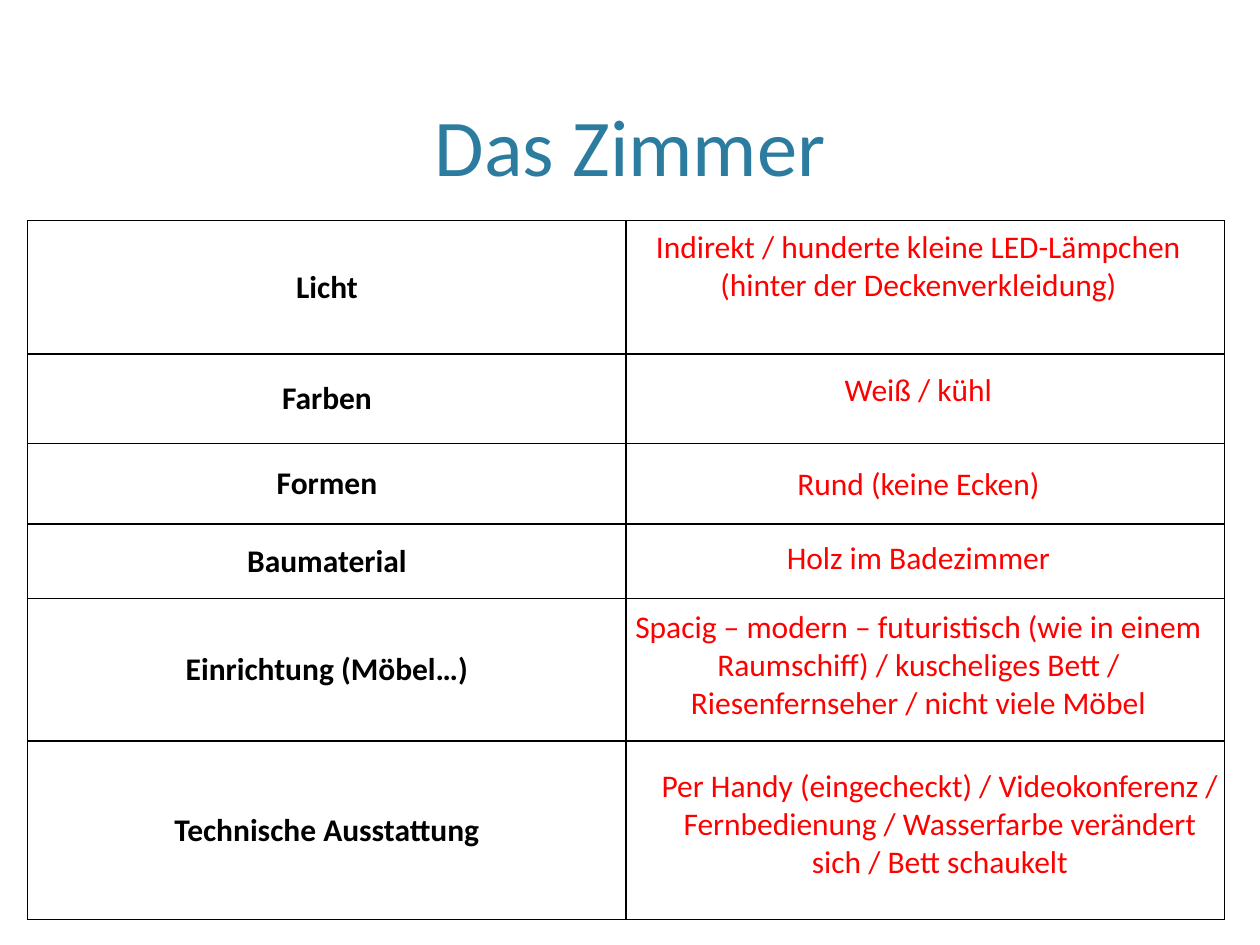
from dataclasses import dataclass

from lxml import etree
from pptx import Presentation
from pptx.dml.color import RGBColor
from pptx.enum.text import MSO_ANCHOR, MSO_AUTO_SIZE, PP_ALIGN
from pptx.oxml.ns import qn
from pptx.util import Inches, Pt

CENTER = PP_ALIGN.CENTER
MIDDLE, BOTTOM = MSO_ANCHOR.MIDDLE, MSO_ANCHOR.BOTTOM
GROW, FIXED = MSO_AUTO_SIZE.SHAPE_TO_FIT_TEXT, MSO_AUTO_SIZE.NONE


@dataclass(frozen=True)
class Theme:
    """Fonts, colours and type sizes of the slide."""
    font: str = "Calibri"
    title: str = "2C7C9F"
    label: str = "000000"
    answer: str = "FF0000"
    border: str = "000000"
    title_size: int = 46
    body_size: int = 18
    border_width: int = 1


class SlideBuilder:
    """Places styled elements on the current slide."""

    def __init__(self, slide, theme):
        self.s = slide
        self.theme = theme

    def add_text(self, tf, text, size, color, bold=False):
        """Add one centred run to the first paragraph."""
        p = tf.paragraphs[0]
        p.alignment = CENTER
        r = p.add_run()
        r.text = text
        r.font.name = self.theme.font
        r.font.size = Pt(size)
        r.font.bold = bold
        r.font.color.rgb = RGBColor.from_string(color)

    def title(self, text, box):
        """Move and fill the title placeholder."""
        sp = self.s.shapes.title
        sp.left, sp.top, sp.width, sp.height = map(Inches, box)
        tf = sp.text_frame
        tf.auto_size = FIXED
        tf.vertical_anchor = BOTTOM
        self.add_text(tf, text, self.theme.title_size, self.theme.title)

    def borders(self, cell):
        """Draw a solid line on all four sides of a cell."""
        tc_pr = cell._tc.get_or_add_tcPr()
        for i, side in enumerate(("a:lnL", "a:lnR", "a:lnT", "a:lnB")):
            ln = etree.Element(qn(side), w=str(Pt(self.theme.border_width)))
            fill = etree.SubElement(ln, qn("a:solidFill"))
            etree.SubElement(fill, qn("a:srgbClr"), val=self.theme.border)
            tc_pr.insert(i, ln)

    def label_table(self, labels, heights, left, top, col_width):
        """Add a two-column table with labels on the left."""
        table = self.s.shapes.add_table(
            len(labels), 2, Inches(left), Inches(top),
            Inches(2 * col_width), Inches(sum(heights))).table
        table.first_row = table.horz_banding = False
        for col in table.columns:
            col.width = Inches(col_width)
        for row, label, height in zip(table.rows, labels, heights):
            row.height = Inches(height)
            for cell in row.cells:
                cell.fill.background()
                cell.vertical_anchor = MIDDLE
                self.borders(cell)
            self.add_text(row.cells[0].text_frame, label,
                          self.theme.body_size, self.theme.label, bold=True)

    def answer(self, text, left, top, width, height):
        """Add a centred answer over the right column."""
        sp = self.s.shapes.add_textbox(*map(Inches, (left, top, width, height)))
        tf = sp.text_frame
        tf.word_wrap = True
        tf.auto_size = GROW
        self.add_text(tf, text, self.theme.body_size, self.theme.answer)


ROWS = [
    ("Licht", 1.06),
    ("Farben", 0.71),
    ("Formen", 0.64),
    ("Baumaterial", 0.59),
    ("Einrichtung (Möbel…)", 1.13),
    ("Technische Ausstattung", 1.42),
]

ANSWERS = [
    ("Indirekt / hunderte kleine LED-Lämpchen (hinter der Deckenverkleidung)",
     4.86, 1.75, 1.01),
    ("Weiß / kühl", 4.86, 2.89, 0.4),
    ("Rund (keine Ecken)", 4.86, 3.63, 0.4),
    ("Holz im Badezimmer", 4.86, 4.22, 0.4),
    ("Spacig – modern – futuristisch (wie in einem Raumschiff) / "
     "kuscheliges Bett / Riesenfernseher / nicht viele Möbel",
     4.86, 4.77, 1.01),
    ("Per Handy (eingecheckt) / Videokonferenz / Fernbedienung / "
     "Wasserfarbe verändert sich / Bett schaukelt",
     5.03, 6.03, 1.31),
]


def main():
    """Build the slide and save it."""
    prs = Presentation()
    prs.slide_width, prs.slide_height = Inches(10), Inches(7.5)
    slide = SlideBuilder(prs.slides.add_slide(prs.slide_layouts[5]), Theme())
    slide.title("Das Zimmer", (0.6, 0.12, 8.8, 1.46))
    labels, heights = zip(*ROWS)
    slide.label_table(labels, heights, left=0.22, top=1.75, col_width=4.75)
    for text, left, top, height in ANSWERS:
        slide.answer(text, left, top, 4.86, height)
    prs.save("out.pptx")


if __name__ == "__main__":
    main()
